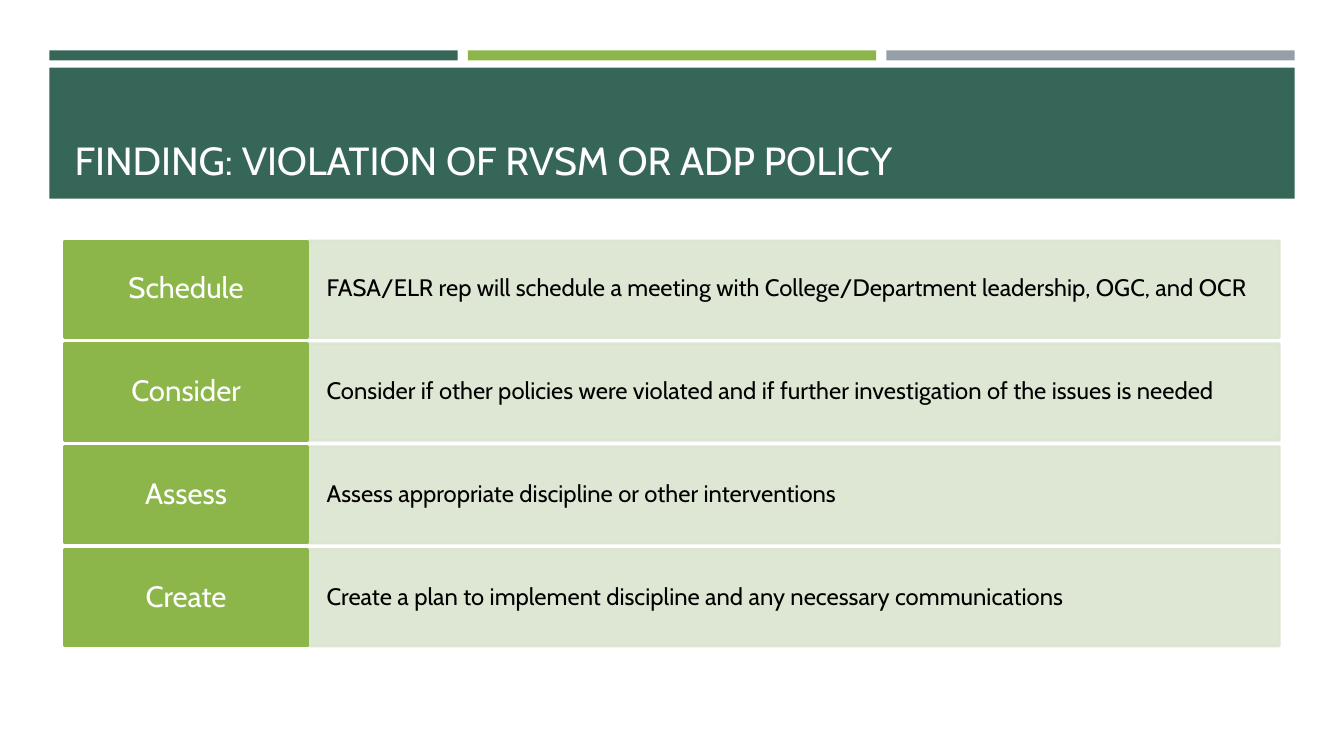
from lxml.etree import SubElement
from pptx import Presentation
from pptx.dml.color import RGBColor
from pptx.enum.shapes import MSO_SHAPE as Shape
from pptx.enum.text import MSO_ANCHOR as Anchor, MSO_AUTO_SIZE as AutoSize, PP_ALIGN as Align
from pptx.oxml.ns import qn
from pptx.util import Inches, Pt

PINE = RGBColor(0x36, 0x66, 0x58)
LEAF = RGBColor(0x8C, 0xB6, 0x4A)
SLATE = RGBColor(0x96, 0x9F, 0xA7)
PALE = RGBColor(0xDA, 0xE5, 0xD0)
OFF_WHITE = RGBColor(0xFF, 0xFE, 0xFF)
WHITE = RGBColor(0xFF, 0xFF, 0xFF)
BLACK = RGBColor(0, 0, 0)

BAND_LEFT, BAR_WIDTH, BAR_PITCH = 0.49, 4.05, 4.15
GRID_LEFT, GRID_TOP = 0.64, 2.39
COLUMN, ROW_PITCH, ROW_HEIGHT = 2.41, 1.02, 0.96

TITLE = "FINDING: VIOLATION OF RVSM OR ADP POLICY"
STEPS = [
    ("Schedule", "FASA/ELR rep will schedule a meeting with College/Department leadership, OGC, and OCR"),
    ("Consider", "Consider if other policies were violated and if further investigation of the issues is needed"),
    ("Assess", "Assess appropriate discipline or other interventions"),
    ("Create", "Create a plan to implement discipline and any necessary communications"),
]


def set_all(target, values):
    for name, value in values.items():
        setattr(target, name, value)


def set_opacity(properties, percent):
    """Add an alpha value to every solid colour below the given element."""
    for color in properties.iter(qn("a:srgbClr")):
        SubElement(color, qn("a:alpha"), val=str(percent * 1000))


class StepSlide:
    font_name = "Cabin"
    label_format = {"size": Pt(21), "color": WHITE, "align": Align.CENTER, "insets": (0.13, 0.09)}
    detail_format = {"size": Pt(17), "color": BLACK, "align": Align.LEFT, "insets": (0.19, 0.24)}
    title_format = {"size": Pt(28), "color": OFF_WHITE, "align": Align.LEFT, "insets": (0.1, 0.05)}

    def __init__(self, deck):
        self.page = deck.slides.add_slide(deck.slide_layouts[5])

    def block(self, left, top, width, height, color, outlined=False):
        box = self.page.shapes.add_shape(
            Shape.RECTANGLE, *(Inches(value) for value in (left, top, width, height)))
        box.shadow.inherit = False
        box.fill.solid()
        box.fill.fore_color.rgb = color
        if outlined:
            box.line.color.rgb = color
            box.line.width = Pt(1.75)
        else:
            box.line.fill.background()
        return box

    def put_text(self, box, text, style, anchor=Anchor.MIDDLE):
        side, end = (Inches(inset) for inset in style["insets"])
        set_all(box.text_frame, {
            "word_wrap": True, "auto_size": AutoSize.NONE, "vertical_anchor": anchor,
            "margin_left": side, "margin_right": side, "margin_top": end, "margin_bottom": end,
        })
        para = box.text_frame.paragraphs[0]
        set_all(para, {"alignment": style["align"], "line_spacing": 0.9, "space_after": Pt(6)})
        span = para.add_run()
        span.text = text
        set_all(span.font, {"name": self.font_name, "size": style["size"]})
        span.font.color.rgb = style["color"]

    def header(self, text):
        for index, color in enumerate((PINE, LEAF, SLATE)):
            self.block(BAND_LEFT + index * BAR_PITCH, 0.5, BAR_WIDTH, 0.1, color)
        self.block(BAND_LEFT, 0.67, 2 * BAR_PITCH + BAR_WIDTH, 1.3, PINE)
        title = self.page.shapes.title
        set_all(title, {"left": Inches(GRID_LEFT), "top": Inches(0.77),
                        "width": Inches(5 * COLUMN), "height": Inches(1.11)})
        self.put_text(title, text, self.title_format, Anchor.BOTTOM)
        # The title must lie in front of its band.
        title.element.getparent().append(title.element)

    def step(self, row, label, detail):
        top = GRID_TOP + row * ROW_PITCH
        detail_box = self.block(GRID_LEFT + COLUMN, top, 4 * COLUMN, ROW_HEIGHT, PALE, outlined=True)
        set_opacity(detail_box.element.spPr, 90)
        self.put_text(detail_box, detail, self.detail_format)
        label_box = self.block(GRID_LEFT, top, COLUMN, ROW_HEIGHT, LEAF, outlined=True)
        self.put_text(label_box, label, self.label_format)


def main():
    deck = Presentation()
    set_all(deck, {"slide_width": Inches(13.33), "slide_height": Inches(7.5)})
    slide = StepSlide(deck)
    slide.header(TITLE)
    for row, (label, detail) in enumerate(STEPS):
        slide.step(row, label, detail)
    deck.save("out.pptx")


if __name__ == "__main__":
    main()
